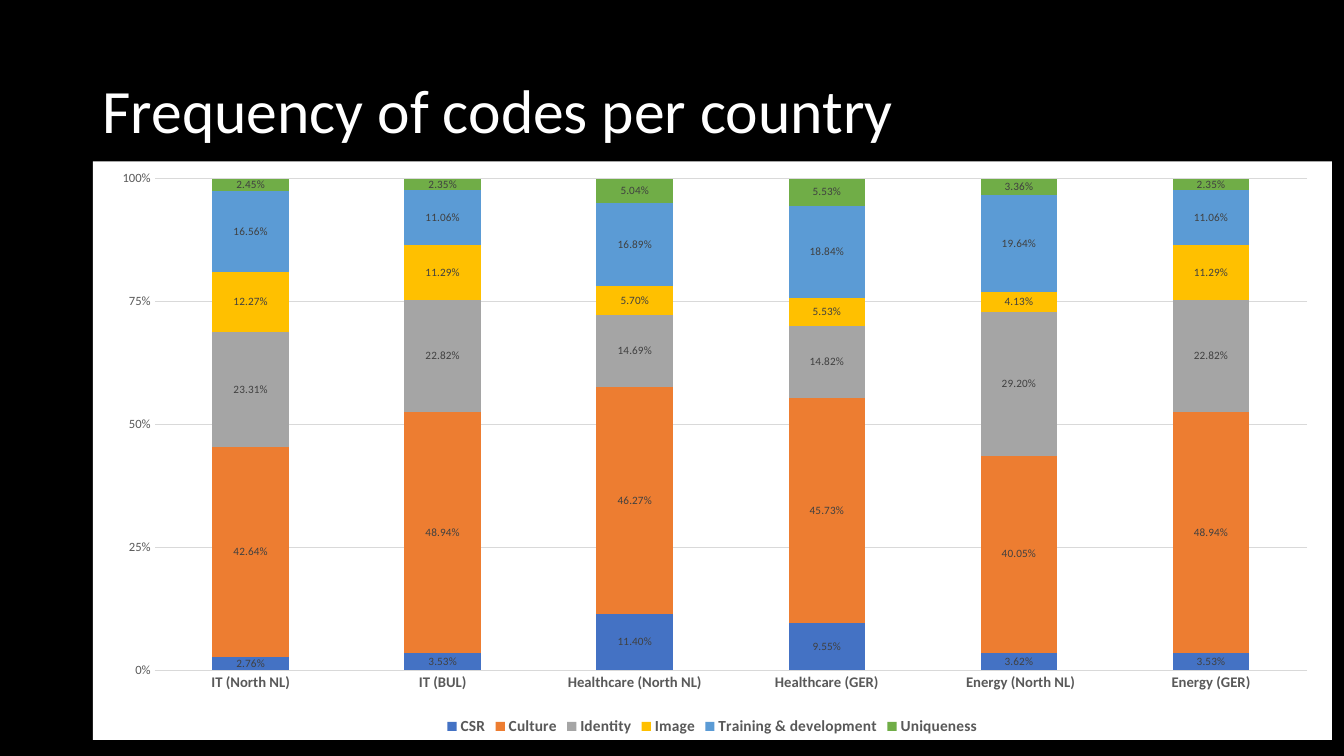
import pptx
import pptx.util
import pptx.chart.data
import pptx.dml.color
import pptx.enum.chart
import pptx.enum.dml
import pptx.enum.text
import pptx.oxml
import pptx.oxml.ns

Inches, Pt = pptx.util.Inches, pptx.util.Pt

# Content
TITLE = "Frequency of codes per country"
GROUPS = ["IT (North NL)", "IT (BUL)", "Healthcare (North NL)",
          "Healthcare (GER)", " Energy (North NL)", "Energy (GER)"]
CODES = [  # code, colour, share per group
    ("CSR", "4472C4", (0.0276, 0.0353, 0.114, 0.0955, 0.0362, 0.0353)),
    ("Culture", "ED7D31", (0.4264, 0.4894, 0.4627, 0.4573, 0.4005, 0.4894)),
    ("Identity", "A5A5A5", (0.2331, 0.2282, 0.1469, 0.1482, 0.292, 0.2282)),
    ("Image", "FFC000", (0.1227, 0.1129, 0.057, 0.0553, 0.0413, 0.1129)),
    ("Training & development", "5B9BD5", (0.1656, 0.1106, 0.1689, 0.1884, 0.1964, 0.1106)),
    ("Uniqueness", "70AD47", (0.0245, 0.0235, 0.0504, 0.0553, 0.0336, 0.0235)),
]
THEME = {
    "font": "Calibri",
    "background": "000000", "title": "FFFFFF", "panel": "FFFFFF",
    "axis": "595959", "label": "404040", "grid": "D9D9D9", "chart": "000000",
    "title_size": 44, "chart_size": 10, "group_size": 10.5,
    "scale_size": 9, "legend_size": 11, "label_size": 8,
}
PLOT = {"x": 0.05, "y": 0.03, "w": 0.93, "h": 0.85}  # fractions of the chart


def rgb(value):
    return pptx.dml.color.RGBColor.from_string(value)


def set_font(font, part, size, bold=False):
    font.name = THEME["font"]
    font.size = Pt(THEME[size])
    font.bold = bold
    font.color.rgb = rgb(THEME[part])


def set_line(line):
    line.color.rgb = rgb(THEME["grid"])
    line.width = Pt(0.75)


def add_panel(chart):
    """Give the whole chart a plain background."""
    panel = pptx.oxml.parse_xml(
        f'<c:spPr {pptx.oxml.ns.nsdecls("c", "a")}><a:solidFill>'
        f'<a:srgbClr val="{THEME["panel"]}"/></a:solidFill>'
        '<a:ln><a:noFill/></a:ln></c:spPr>')
    chart.element.find(pptx.oxml.ns.qn("c:chart")).addnext(panel)


def place_plot(chart):
    """Fix the inner plot area inside the chart."""
    sizes = "".join(f'<c:{side} val="{part}"/>' for side, part in PLOT.items())
    layout = pptx.oxml.parse_xml(
        f'<c:layout {pptx.oxml.ns.nsdecls("c")}><c:manualLayout>'
        '<c:layoutTarget val="inner"/><c:xMode val="edge"/><c:yMode val="edge"/>'
        f'{sizes}</c:manualLayout></c:layout>')
    plot_area = chart.element.find(".//" + pptx.oxml.ns.qn("c:plotArea"))
    for old in plot_area.findall(pptx.oxml.ns.qn("c:layout")):
        plot_area.remove(old)
    plot_area.insert(0, layout)


def add_title(slide):
    title = slide.shapes.add_textbox(Inches(0.92), Inches(0.4), Inches(11.5), Inches(1.45))
    title.text_frame.word_wrap = True
    title.text_frame.vertical_anchor = pptx.enum.text.MSO_ANCHOR.MIDDLE
    heading = title.text_frame.paragraphs[0]
    heading.text = TITLE
    heading.line_spacing = 0.9
    set_font(heading.font, "title", "title_size")


def add_frequencies(slide):
    shares = pptx.chart.data.CategoryChartData(number_format="0.00%")
    shares.categories = GROUPS
    for code, _, values in CODES:
        shares.add_series(code, values)
    chart = slide.shapes.add_chart(
        pptx.enum.chart.XL_CHART_TYPE.COLUMN_STACKED,
        Inches(0.92), Inches(1.6), Inches(12.29), Inches(5.74), shares).chart
    chart.has_title = False
    set_font(chart.font, "chart", "chart_size")
    add_panel(chart)
    place_plot(chart)

    # Columns and their labels
    columns = chart.plots[0]
    columns.gap_width = 150
    columns.overlap = 100
    columns.vary_by_categories = False
    for series, (_, colour, _) in zip(columns.series, CODES):
        series.format.fill.solid()
        series.format.fill.fore_color.rgb = rgb(colour)
        labels = series.data_labels
        labels.show_value = True
        labels.number_format = "0.00%"
        labels.number_format_is_linked = False
        labels.position = pptx.enum.chart.XL_LABEL_POSITION.CENTER
        set_font(labels.font, "label", "label_size")

    # Axes
    groups, scale = chart.category_axis, chart.value_axis
    for axis in (groups, scale):
        axis.major_tick_mark = axis.minor_tick_mark = pptx.enum.chart.XL_TICK_MARK.NONE
    set_font(groups.tick_labels.font, "axis", "group_size", bold=True)
    set_line(groups.format.line)
    set_font(scale.tick_labels.font, "axis", "scale_size")
    scale.minimum_scale, scale.maximum_scale, scale.major_unit = 0, 1, 0.25
    scale.tick_labels.number_format = "0%"
    scale.tick_labels.number_format_is_linked = False
    scale.format.line.fill.background()
    set_line(scale.major_gridlines.format.line)

    # Legend
    chart.has_legend = True
    chart.legend.position = pptx.enum.chart.XL_LEGEND_POSITION.BOTTOM
    chart.legend.include_in_layout = False
    set_font(chart.legend.font, "axis", "legend_size", bold=True)


def main():
    deck = pptx.Presentation()
    deck.slide_width, deck.slide_height = Inches(13.33), Inches(7.5)
    slide = deck.slides.add_slide(deck.slide_layouts[6])
    slide.background.fill.solid()
    slide.background.fill.fore_color.rgb = rgb(THEME["background"])
    add_title(slide)
    add_frequencies(slide)
    deck.save("out.pptx")


if __name__ == "__main__":
    main()
